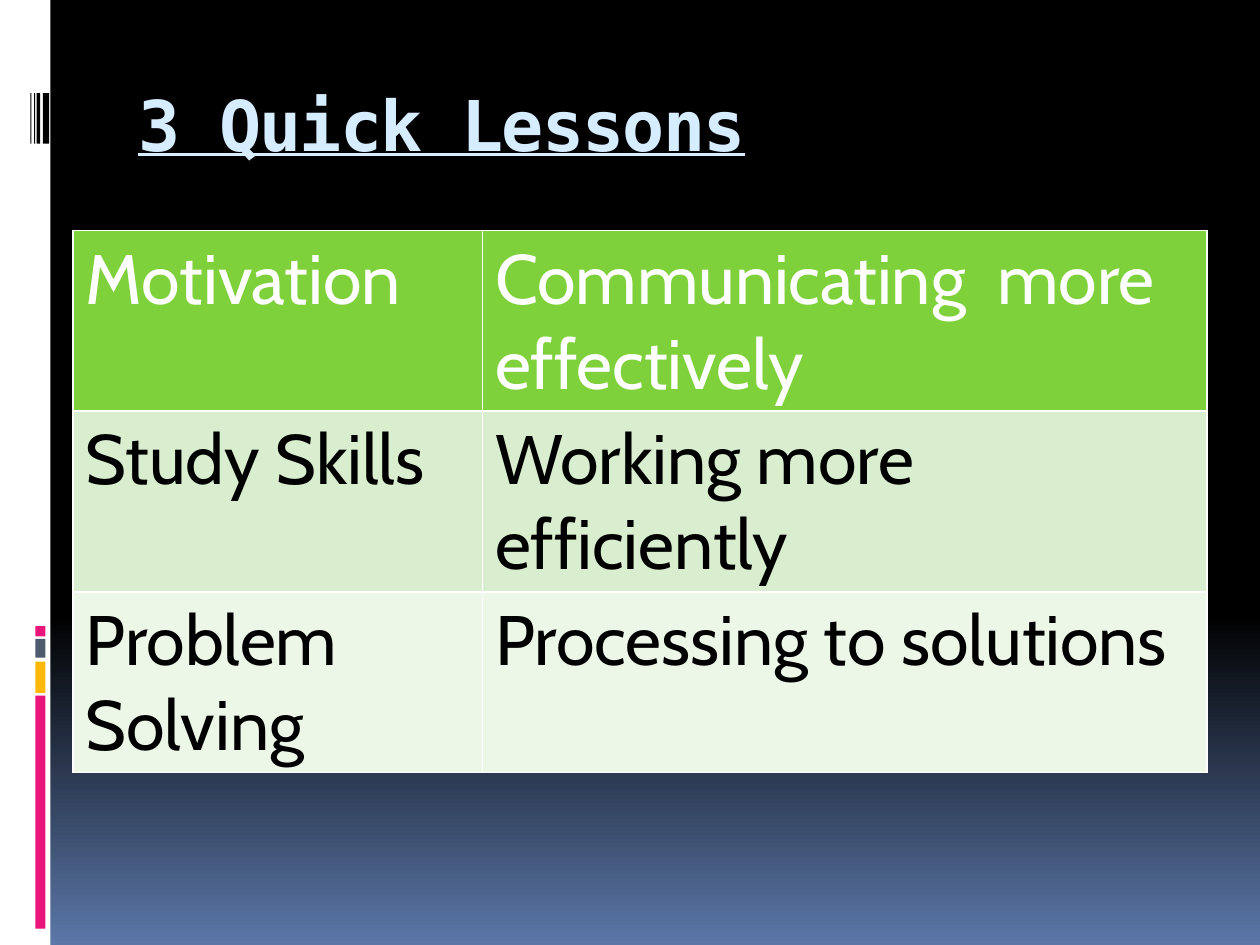
from typing import NamedTuple

from lxml.etree import SubElement
from pptx import Presentation
from pptx.dml.color import RGBColor
from pptx.enum.shapes import MSO_SHAPE
from pptx.oxml.ns import qn
from pptx.util import Inches, Pt

WHITE = RGBColor(0xFF, 0xFF, 0xFF)
BLACK = RGBColor(0x00, 0x00, 0x00)
BLUE = RGBColor(0x5B, 0x77, 0xA8)
ICE = RGBColor(0xD6, 0xEC, 0xFF)
PINK = RGBColor(0xEA, 0x15, 0x7A)
GOLD = RGBColor(0xFE, 0xB8, 0x0A)
SLATE = RGBColor(0x4E, 0x5B, 0x6F)
GREEN = RGBColor(0x7F, 0xD1, 0x3B)
MINT = RGBColor(0xD8, 0xEE, 0xCE)
PALE = RGBColor(0xEC, 0xF7, 0xE8)

# The slide is a grid of 100 columns by 75 rows
UNIT = Inches(0.1)


class Bar(NamedTuple):
    col: float
    row: float
    wide: float
    high: float
    color: RGBColor


class Line(NamedTuple):
    topic: str
    gain: str
    fill: RGBColor
    ink: RGBColor


BARS = [
    Bar(0, 0, 4, 75, WHITE),
    # Coloured blocks at the foot of the strip
    Bar(2.8, 55.2, 0.8, 18.5, PINK),
    Bar(2.8, 52.5, 0.8, 2.5, GOLD),
    Bar(2.8, 50.7, 0.8, 1.5, SLATE),
    Bar(2.8, 49.7, 0.8, 0.8, PINK),
    # Black stripes beside the title
    *(Bar(col, 7.4, wide, 4, BLACK)
      for col, wide in ((3.4, 0.5), (2.9, 0.3), (2.7, 0.1), (2.4, 0.1))),
]

LINES = [
    Line("Motivation", "Communicating  more effectively", GREEN, WHITE),
    Line("Study Skills", "Working more efficiently", MINT, BLACK),
    Line("Problem Solving", "Processing to solutions", PALE, BLACK),
]


def grid(*sizes: float) -> list[int]:
    return [round(size * UNIT) for size in sizes]


def style(frame, face: str, color: RGBColor):
    run = frame.paragraphs[0].runs[0]
    run.font.name = face
    run.font.size = Pt(40)
    run.font.color.rgb = color
    return run


def draw_back(slide) -> None:
    fill = slide.background.fill
    fill.gradient()
    fill.gradient_angle = 270
    for stop, place, color in zip(fill.gradient_stops, (0.65, 1), (BLACK, BLUE)):
        stop.position = place
        stop.color.rgb = color


def draw_bar(slide, bar: Bar) -> None:
    shape = slide.shapes.add_shape(MSO_SHAPE.RECTANGLE, *grid(*bar[:4]))
    shape.shadow.inherit = False
    shape.fill.solid()
    shape.fill.fore_color.rgb = bar.color
    shape.line.fill.background()


def draw_title(slide, text: str) -> None:
    frame = slide.shapes.add_textbox(*grid(10, 5.6, 85, 10)).text_frame
    frame.word_wrap = True
    frame.margin_top = Inches(0.09)
    frame.text = text
    run = style(frame, "DejaVu Sans Mono", ICE)
    run.font.bold = True
    run.font.underline = True
    run.font._element.set("spc", "-100")


def add_edges(cell) -> None:
    props = cell._tc.get_or_add_tcPr()
    for spot, side in enumerate(("lnL", "lnR", "lnT", "lnB")):
        edge = SubElement(props, qn(f"a:{side}"), w=str(Pt(1)))
        fill = SubElement(edge, qn("a:solidFill"))
        SubElement(fill, qn("a:srgbClr"), val=str(WHITE))
        props.insert(spot, edge)  # edges come before the fill


def draw_table(slide, lines: list[Line]) -> None:
    table = slide.shapes.add_table(
        len(lines), 2, *grid(5.8, 18.3, 90, 13.9 * len(lines))).table
    for column, width in zip(table.columns, grid(32.5, 57.5)):
        column.width = width
    for row, line in zip(table.rows, lines):
        for cell, text in zip(row.cells, line[:2]):
            cell.text_frame.text = text
            style(cell.text_frame, "Cabin", line.ink).font.bold = False
            cell.fill.solid()
            cell.fill.fore_color.rgb = line.fill
            add_edges(cell)


def main() -> None:
    deck = Presentation()
    deck.slide_width, deck.slide_height = grid(100, 75)
    slide = deck.slides.add_slide(deck.slide_layouts[6])
    draw_back(slide)
    for bar in BARS:
        draw_bar(slide, bar)
    draw_title(slide, "3 Quick Lessons")
    draw_table(slide, LINES)
    deck.save("out.pptx")


if __name__ == "__main__":
    main()
